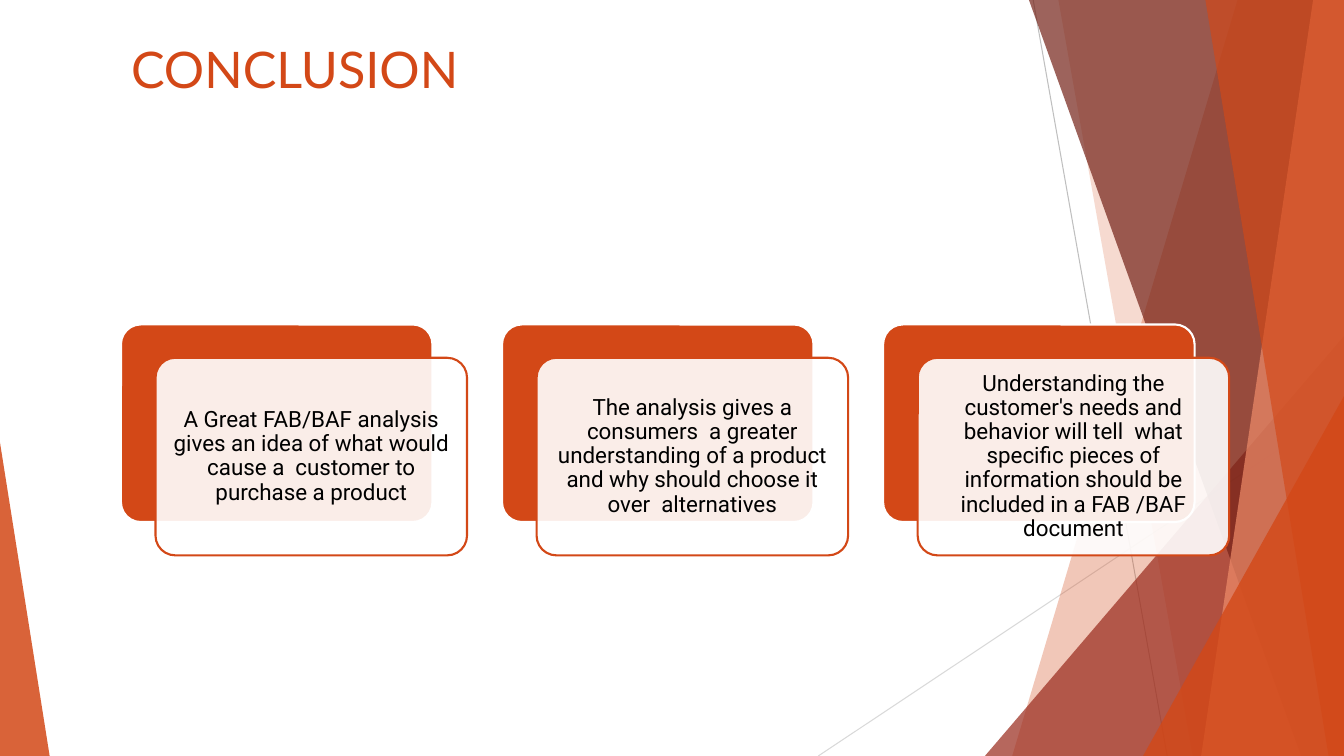
from dataclasses import dataclass

from lxml.etree import SubElement
from pptx import Presentation
from pptx.dml.color import RGBColor
from pptx.enum.shapes import MSO_CONNECTOR, MSO_SHAPE
from pptx.enum.text import MSO_ANCHOR, MSO_AUTO_SIZE, PP_ALIGN
from pptx.oxml.ns import qn
from pptx.shapes.autoshape import Shape
from pptx.shapes.shapetree import SlideShapes
from pptx.text.text import TextFrame
from pptx.util import Pt

WIDE, HIGH = 960, 540


@dataclass(frozen=True)
class Theme:
    rust: str = "D34817"
    brick: str = "9B2D1F"
    wine: str = "742217"
    peach: str = "EF8C6A"
    white: str = "FFFFFF"
    black: str = "000000"
    gray: str = "BFBFBF"
    pale: str = "D9D9D9"
    head: str = "Lato"
    body: str = "Roboto"
    large: float = 36
    small: float = 16


@dataclass(frozen=True)
class Ray:
    start: tuple[float, float]
    end: tuple[float, float]
    color: str


@dataclass(frozen=True)
class Band:
    """Facet from the top edge to the bottom edge, ending at the right side."""
    top: float
    base: float
    color: str
    alpha: int


@dataclass(frozen=True)
class Wedge:
    """Right triangle standing on the bottom edge."""
    left: float
    top: float
    width: float
    peak: float
    color: str
    alpha: int


@dataclass(frozen=True)
class Card:
    left: float
    top: float
    text: str


THEME = Theme()

RAYS = [
    Ray((738, 0), (833.75, HIGH), THEME.gray),
    Ray((WIDE, 290), (584.5, HIGH), THEME.pale),
]
# Facets from back to front
FACETS = [
    Band(884, 723, THEME.rust, 30),
    Band(756, 852, THEME.rust, 20),
    Wedge(703.5, 240, 256.5, 1, THEME.brick, 72),
    Band(735, 929.5, THEME.wine, 70),
    Band(938, 858, THEME.peach, 70),
    Band(861, 949, THEME.rust, 65),
    Wedge(816.5, 283, 143.5, 1, THEME.rust, 80),
    Wedge(0, 316, 35.5, 0, THEME.rust, 85),
]

LEFT, TOP, STEP = 86.4, 231.8, 272.2
CARD_W, CARD_H = 222.5, 141.1
SHIFT_X, SHIFT_Y = 24.7, 23.8
POINTS = [
    "A Great FAB/BAF analysis gives an idea of what would cause a  customer to "
    "purchase a product",
    "The analysis gives a consumers  a greater understanding of a product and "
    "why should choose it over  alternatives",
    "Understanding the customer's needs and behavior will tell  what specific "
    "pieces of information should be included in a FAB /BAF document",
]
CARDS = [Card(LEFT + i * STEP, TOP, text) for i, text in enumerate(POINTS)]


def paint(shape: Shape, color: str, alpha: int = 100, edge: str = "") -> None:
    shape.shadow.inherit = False
    shape.fill.solid()
    shape.fill.fore_color.rgb = RGBColor.from_string(color)
    if alpha < 100:
        tint = shape.element.spPr.find(qn("a:solidFill"))[0]
        SubElement(tint, qn("a:alpha"), val=str(alpha * 1000))
    if edge:
        shape.line.color.rgb = RGBColor.from_string(edge)
        shape.line.width = Pt(1.5)
    else:
        shape.line.fill.background()


def write(frame: TextFrame, text: str, *, face: str, size: float, color: str,
          align: PP_ALIGN, anchor: MSO_ANCHOR, inset: float,
          space: float = 1) -> None:
    frame.word_wrap = True
    frame.auto_size = MSO_AUTO_SIZE.NONE
    frame.vertical_anchor = anchor
    frame.margin_left = frame.margin_right = Pt(inset)
    frame.margin_top = frame.margin_bottom = Pt(min(inset, 5))
    line = frame.paragraphs[0]
    line.alignment, line.line_spacing = align, space
    run = line.add_run()
    run.text = text
    run.font.name, run.font.size = face, Pt(size)
    run.font.color.rgb = RGBColor.from_string(color)


def draw_ray(shapes: SlideShapes, ray: Ray) -> None:
    ends = [Pt(n) for n in (*ray.start, *ray.end)]
    line = shapes.add_connector(MSO_CONNECTOR.STRAIGHT, *ends)
    line.line.color.rgb = RGBColor.from_string(ray.color)
    line.line.width = Pt(0.75)
    SubElement(line.element.spPr, qn("a:effectLst"))


def draw_facet(shapes: SlideShapes, facet: Band | Wedge) -> None:
    if isinstance(facet, Band):
        pen = shapes.build_freeform(Pt(facet.top), Pt(0))
        ends = [(WIDE, 0), (WIDE, HIGH), (facet.base, HIGH)]
        pen.add_line_segments([(Pt(x), Pt(y)) for x, y in ends], close=True)
        shape = pen.convert_to_shape()
    else:
        shape = shapes.add_shape(
            MSO_SHAPE.ISOSCELES_TRIANGLE, Pt(facet.left), Pt(facet.top),
            Pt(facet.width), Pt(HIGH - facet.top))
        shape.adjustments[0] = facet.peak
    paint(shape, facet.color, facet.alpha)


def draw_panel(shapes: SlideShapes, left: float, top: float) -> Shape:
    panel = shapes.add_shape(MSO_SHAPE.ROUNDED_RECTANGLE, Pt(left), Pt(top),
                             Pt(CARD_W), Pt(CARD_H))
    panel.adjustments[0] = 0.1
    return panel


def draw_card(shapes: SlideShapes, card: Card) -> None:
    back = draw_panel(shapes, card.left, card.top)
    paint(back, THEME.rust, edge=THEME.white)
    front = draw_panel(shapes, card.left + SHIFT_X, card.top + SHIFT_Y)
    paint(front, THEME.white, 90, THEME.rust)
    write(front.text_frame, card.text, face=THEME.body, size=THEME.small,
          color=THEME.black, align=PP_ALIGN.CENTER, anchor=MSO_ANCHOR.MIDDLE,
          inset=5, space=0.9)


def main() -> None:
    deck = Presentation()
    deck.slide_width, deck.slide_height = Pt(WIDE), Pt(HIGH)
    shapes = deck.slides.add_slide(deck.slide_layouts[5]).shapes

    # Backdrop
    for ray in RAYS:
        draw_ray(shapes, ray)
    for facet in FACETS:
        draw_facet(shapes, facet)

    # Title
    title = shapes.title
    title.left, title.top = Pt(LEFT), Pt(22.3)
    title.width, title.height = Pt(792), Pt(114.5)
    write(title.text_frame, "CONCLUSION", face=THEME.head, size=THEME.large,
          color=THEME.rust, align=PP_ALIGN.LEFT, anchor=MSO_ANCHOR.TOP,
          inset=7.2)

    # Cards
    for card in CARDS:
        draw_card(shapes, card)

    deck.save("out.pptx")


if __name__ == "__main__":
    main()
